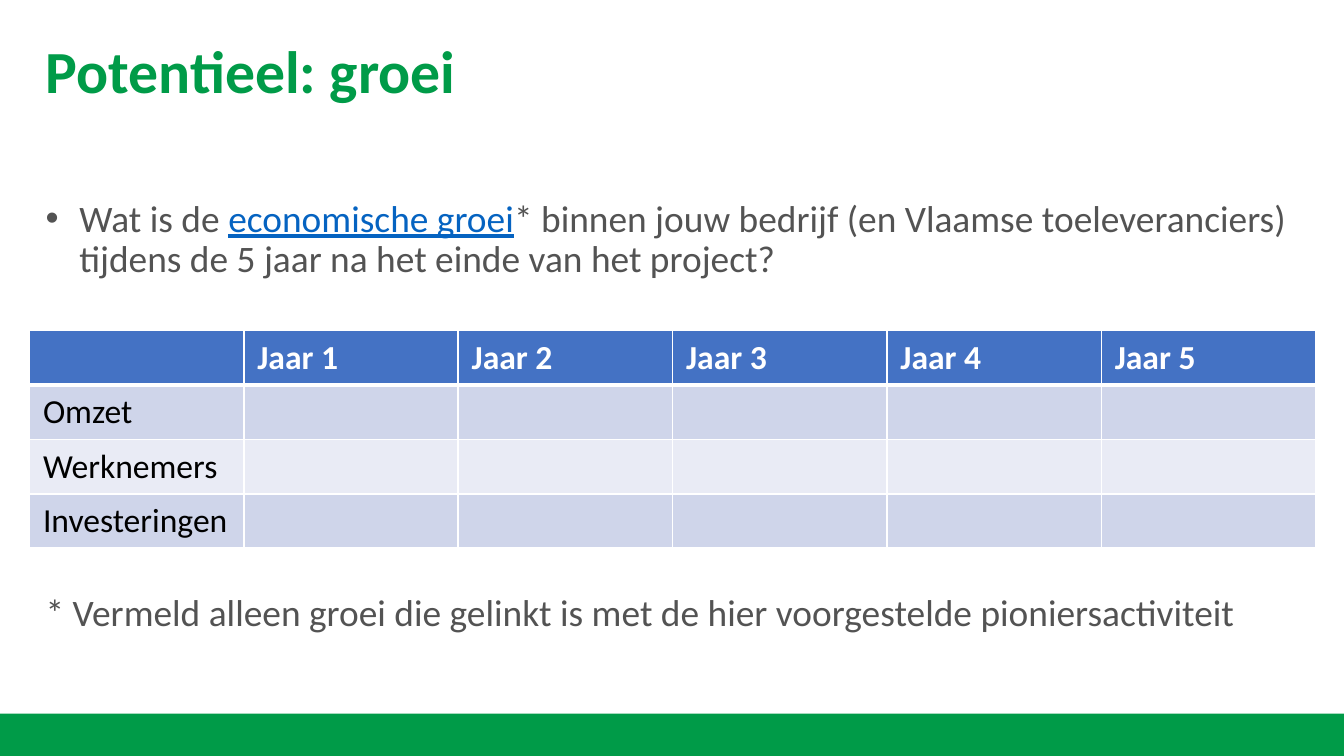
from dataclasses import dataclass

from lxml.etree import SubElement
from pptx import Presentation
from pptx.dml.color import RGBColor
from pptx.enum.shapes import MSO_SHAPE
from pptx.oxml.ns import qn
from pptx.util import Inches, Pt

COLORS = {
    "green": "009B48", "grey": "535353", "link": "0563C1", "header": "4472C4",
    "band_dark": "CFD5EA", "band_light": "E9EBF5", "white": "FFFFFF", "black": "000000",
}
FONT = "Calibri"
YEARS = 5
SLIDE_WIDTH = Inches(10)
SLIDE_HEIGHT = SLIDE_WIDTH * 9 // 16
TABLE_WIDTH = Inches(9.57)
TABLE_HEIGHT = Inches(1.62)


@dataclass(frozen=True)
class Run:
    text: str
    color: str = "grey"
    underline: bool = False


@dataclass(frozen=True)
class TextBlock:
    top: float
    height: float
    size: int
    runs: tuple[Run, ...]
    bold: bool = False
    bullet: bool = False


@dataclass(frozen=True)
class TableRow:
    labels: tuple[str, ...]
    fill: str
    color: str = "black"
    bold: bool = False
    bottom_line: int = 1


BLOCKS = (
    TextBlock(0.31, 0.51, 32, (Run("Potentieel: groei", "green"),), bold=True),
    TextBlock(1.49, 0.7, 20, (
        Run("Wat is de "),
        Run("economische groei", "link", underline=True),
        Run("* binnen jouw bedrijf (en Vlaamse toeleveranciers) "
            "tijdens de 5 jaar na het einde van het project?"),
    ), bullet=True),
    TextBlock(4.42, 0.4, 20, (
        Run("* Vermeld alleen groei die gelinkt is met de hier voorgestelde pioniersactiviteit"),
    )),
)
ROWS = (
    TableRow(("", *(f"Jaar {year}" for year in range(1, YEARS + 1))),
             "header", "white", bold=True, bottom_line=3),
    TableRow(("Omzet", *[""] * YEARS), "band_dark"),
    TableRow(("Werknemers", *[""] * YEARS), "band_light"),
    TableRow(("Investeringen", *[""] * YEARS), "band_dark"),
)


def rgb(name: str) -> RGBColor:
    """Return the named colour."""
    return RGBColor.from_string(COLORS[name])


def add_text(slide, block: TextBlock) -> None:
    """Draw one block of text across the slide."""
    box = slide.shapes.add_textbox(
        Inches(0.34), Inches(block.top), Inches(9.35), Inches(block.height))
    frame = box.text_frame
    frame.word_wrap = True
    frame.margin_left = frame.margin_right = frame.margin_top = frame.margin_bottom = 0
    paragraph = frame.paragraphs[0]
    paragraph.line_spacing = 0.9
    if block.bullet:
        properties = paragraph._p.get_or_add_pPr()
        properties.set("marL", str(Inches(0.25)))
        properties.set("indent", str(-Inches(0.25)))
        SubElement(properties, qn("a:buFont"), typeface="Arial")
        SubElement(properties, qn("a:buChar"), char="•")
    paragraph.font.name = FONT
    paragraph.font.size = Pt(block.size)
    paragraph.font.bold = block.bold
    for part in block.runs:
        run = paragraph.add_run()
        run.text = part.text
        run.font.color.rgb = rgb(part.color)
        run.font.underline = part.underline


def set_borders(cell, top_line: int, bottom_line: int) -> None:
    """Give a cell white borders, ahead of its fill."""
    properties = cell._tc.get_or_add_tcPr()
    widths = {"lnL": 1, "lnR": 1, "lnT": top_line, "lnB": bottom_line}
    for side, width in widths.items():
        line = SubElement(properties, qn(f"a:{side}"), w=str(Pt(width)))
        fill = SubElement(line, qn("a:solidFill"))
        SubElement(fill, qn("a:srgbClr"), val=COLORS["white"])


def add_growth_table(slide, rows: tuple[TableRow, ...]) -> None:
    """Draw the growth table with a column for each year."""
    table = slide.shapes.add_table(
        len(rows), YEARS + 1, Inches(0.22), Inches(2.46),
        TABLE_WIDTH, TABLE_HEIGHT).table
    top_line = 1
    for row, content in zip(table.rows, rows):
        for cell, label in zip(row.cells, content.labels):
            set_borders(cell, top_line, content.bottom_line)
            cell.fill.solid()
            cell.fill.fore_color.rgb = rgb(content.fill)
            cell.text = label
            font = cell.text_frame.paragraphs[0].font
            font.name = FONT
            font.size = Pt(18)
            font.bold = content.bold
            font.color.rgb = rgb(content.color)
        top_line = content.bottom_line


def add_footer_bar(slide) -> None:
    """Draw the green bar along the bottom."""
    top = Inches(5.31)
    bar = slide.shapes.add_shape(
        MSO_SHAPE.RECTANGLE, 0, top, SLIDE_WIDTH, SLIDE_HEIGHT - top)
    bar.shadow.inherit = False
    bar.fill.solid()
    bar.fill.fore_color.rgb = rgb("green")
    bar.line.fill.background()


def main() -> None:
    """Build and save the slide."""
    deck = Presentation()
    deck.slide_width, deck.slide_height = SLIDE_WIDTH, SLIDE_HEIGHT
    slide = deck.slides.add_slide(deck.slide_layouts[6])
    add_footer_bar(slide)
    for block in BLOCKS:
        add_text(slide, block)
    add_growth_table(slide, ROWS)
    deck.save("out.pptx")


if __name__ == "__main__":
    main()
